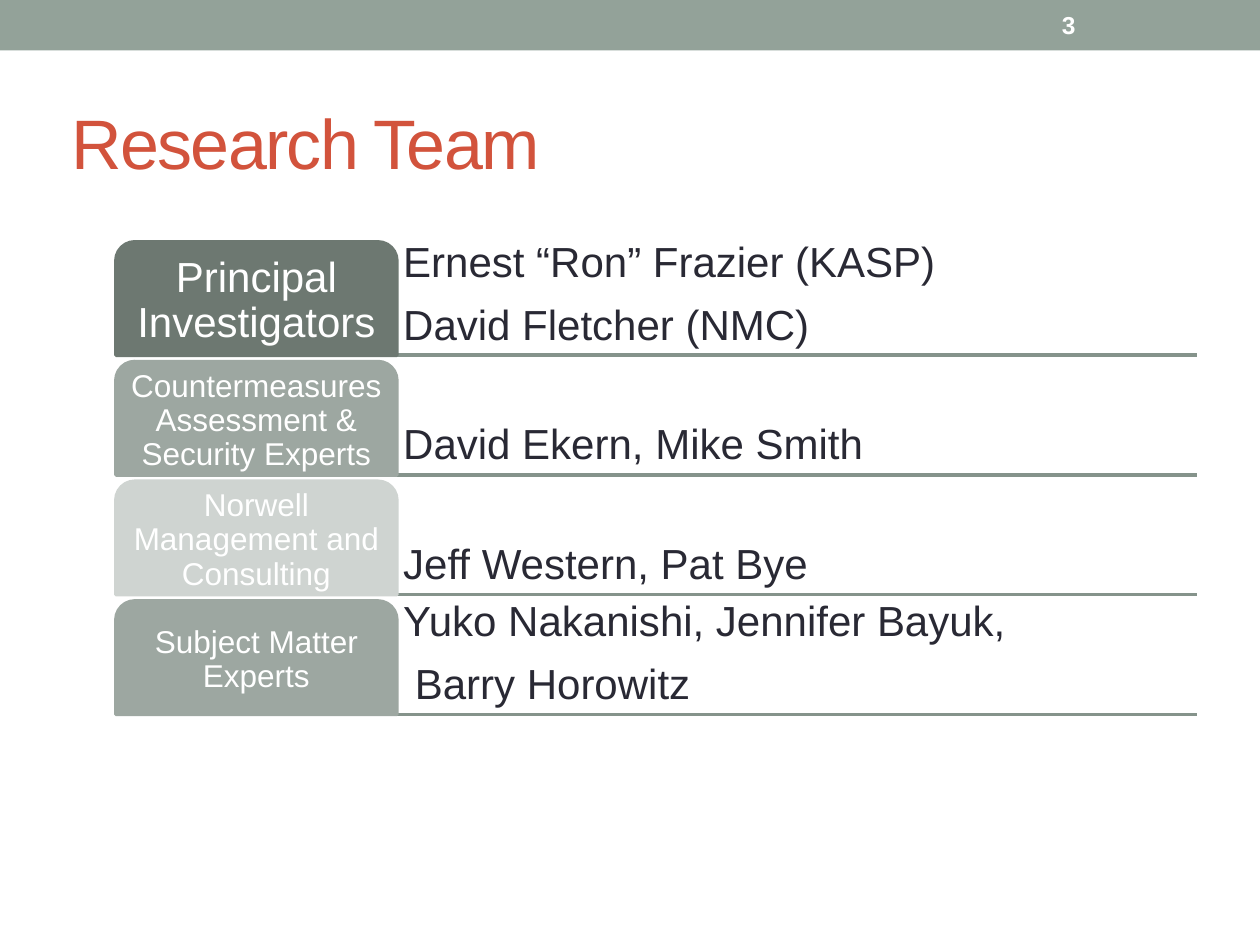
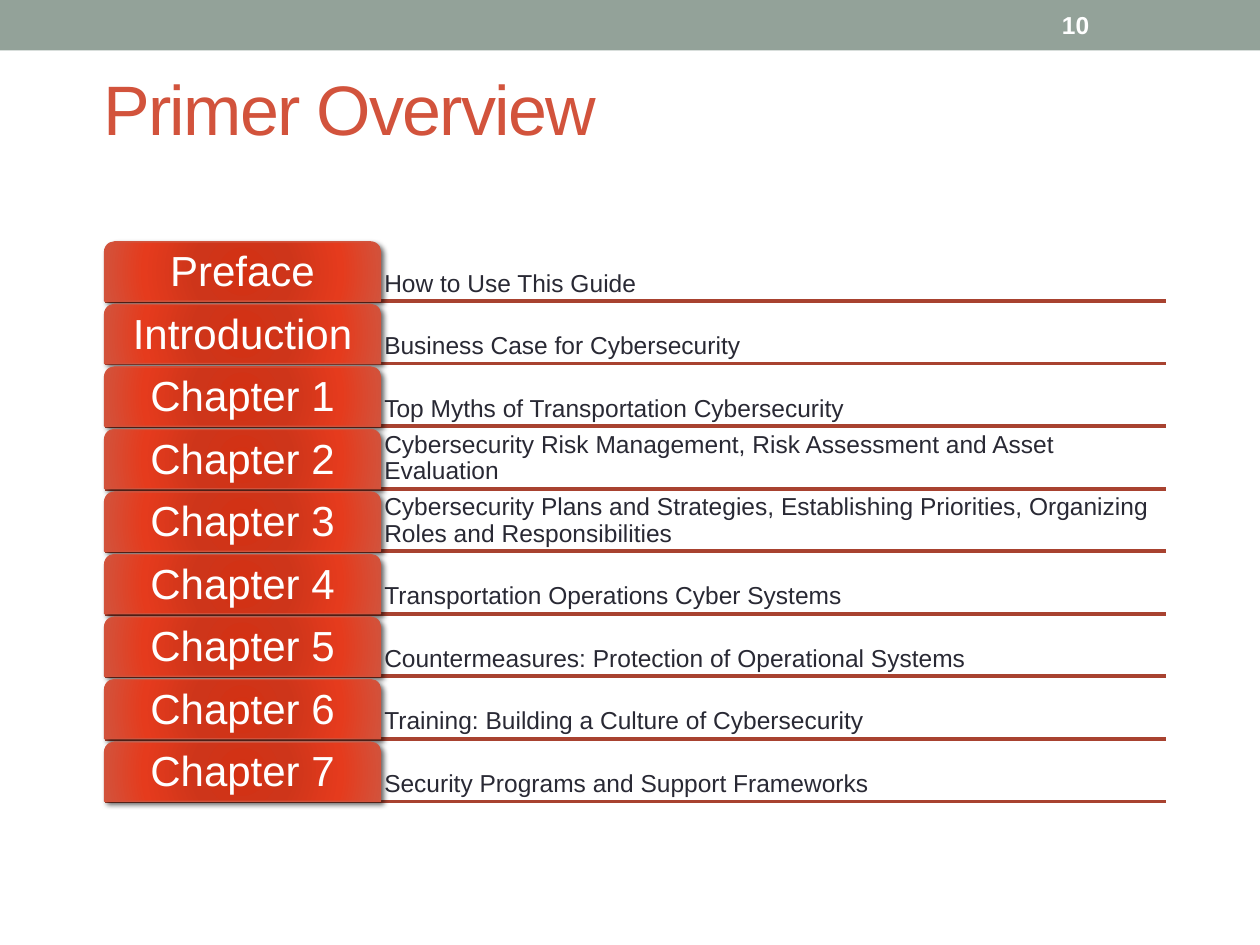
from lxml.etree import SubElement
from pptx import Presentation
from pptx.dml.color import RGBColor
from pptx.enum.shapes import MSO_CONNECTOR, MSO_SHAPE
from pptx.enum.text import MSO_ANCHOR, MSO_AUTO_SIZE, PP_ALIGN
from pptx.oxml import parse_xml
from pptx.oxml.ns import nsdecls, qn
from pptx.util import Inches, Pt

COLORS = {
    "band": "93A299", "title": "D2533C", "ink": "292934", "white": "FFFFFF",
    "sage_rule": "85938B", "dark_sage": "6D7871", "sage": "9DA7A1", "pale_sage": "CFD4D1",
    "red_rule": "A84230", "red_edge": "D2533C",
}
RED_STOPS = [(0, "D43113"), (34, "CE351A"), (70, "E53B1D"), (100, "D2533C")]
SIDES = ("left", "top", "right", "bottom")

TEAM = [
    ("Principal Investigators", ["Ernest “Ron” Frazier (KASP)", "David Fletcher (NMC)"],
     "dark_sage", 24, 0.05),
    ("Countermeasures Assessment & Security Experts", ["David Ekern, Mike Smith"],
     "sage", 18, 0.04),
    ("Norwell Management and Consulting", ["Jeff Western, Pat Bye"],
     "pale_sage", 18, 0.04),
    ("Subject Matter Experts", ["Yuko Nakanishi, Jennifer Bayuk,", " Barry Horowitz"],
     "sage", 18, 0.04),
]
CHAPTERS = [
    ("Preface", "How to Use This Guide"),
    ("Introduction", "Business Case for Cybersecurity"),
    ("Chapter 1", "Top Myths of Transportation Cybersecurity"),
    ("Chapter 2", "Cybersecurity Risk Management, Risk Assessment and Asset Evaluation"),
    ("Chapter 3", "Cybersecurity Plans and Strategies, Establishing Priorities, "
                  "Organizing Roles and Responsibilities"),
    ("Chapter 4", "Transportation Operations Cyber Systems"),
    ("Chapter 5", "Countermeasures: Protection of Operational Systems"),
    ("Chapter 6", "Training: Building a Culture of Cybersecurity"),
    ("Chapter 7", "Security Programs and Support Frameworks"),
]
CHAPTER_ROWS = [(label, [topic], "red_edge", 24, 0.05) for label, topic in CHAPTERS]


def rgb(name):
    return RGBColor.from_string(COLORS[name])


class Deck:
    font = "Arial"

    def __init__(self):
        self.prs = Presentation()
        self.prs.slide_width, self.prs.slide_height = Inches(10), Inches(7.5)
        self.layout = self.prs.slide_layouts[5]
        self.slide = None

    def start(self, title, box, number):
        self.slide = self.prs.slides.add_slide(self.layout)
        if len(self.prs.slides) == 1:
            self.band()
        self.title(title, box)
        self.number(number)

    def band(self):
        band = self.slide.shapes.add_shape(
            MSO_SHAPE.RECTANGLE, 0, 0, self.prs.slide_width, Inches(0.4))
        band.shadow.inherit = False
        band.fill.solid()
        band.fill.fore_color.rgb = rgb("band")
        band.line.fill.background()
        self.layout.shapes._spTree.insert(2, band._element)

    def title(self, text, box):
        heading = self.slide.shapes.title
        for side, length in zip(("left", "top", "width", "height"), box):
            setattr(heading, side, Inches(length))
        self.set_text(heading, [text], 40, "title", (0.07, 0.04, 0.07, 0.04))
        heading.text_frame.paragraphs[0].runs[0]._r.get_or_add_rPr().set("spc", "-100")

    def number(self, text):
        self.text((8.33, 0.02, 1.17, 0.36), [text], 14, "white",
                  (0.1, 0.05, 0.1, 0.05), bold=True)

    def text(self, box, lines, size, color, insets, **style):
        area = self.slide.shapes.add_textbox(*map(Inches, box))
        self.set_text(area, lines, size, color, insets, **style)

    def set_text(self, holder, lines, size, color, insets, anchor=MSO_ANCHOR.MIDDLE,
                 align=PP_ALIGN.LEFT, bold=False, spacing=1.0, after=0):
        frame = holder.text_frame
        frame_format = {"word_wrap": True, "auto_size": MSO_AUTO_SIZE.NONE,
                        "vertical_anchor": anchor}
        frame_format.update(
            {f"margin_{side}": Inches(inset) for side, inset in zip(SIDES, insets)})
        for name, value in frame_format.items():
            setattr(frame, name, value)
        for index, line in enumerate(lines):
            paragraph = frame.add_paragraph() if index else frame.paragraphs[0]
            run = paragraph.add_run()
            run.text = line
            run.font.color.rgb = rgb(color)
            formats = (
                (paragraph, {"alignment": align, "line_spacing": spacing,
                             "space_before": Pt(0), "space_after": Pt(after)}),
                (run.font, {"name": self.font, "size": Pt(size), "bold": bold}),
            )
            for target, values in formats:
                for name, value in values.items():
                    setattr(target, name, value)

    def rule(self, left, right, y, color):
        line = self.slide.shapes.add_connector(
            MSO_CONNECTOR.STRAIGHT, Inches(left), Inches(y), Inches(right), Inches(y))
        line.line.color.rgb = rgb(color)
        line.line.width = Pt(2.08)
        SubElement(line._element.spPr, qn("a:effectLst"))

    def tab(self, box, label, color, size, inset, glossy):
        tab = self.slide.shapes.add_shape(
            MSO_SHAPE.ROUND_2_SAME_RECTANGLE, *map(Inches, box))
        tab.adjustments[0] = 0.167
        tab.shadow.inherit = False
        tab.fill.solid()
        tab.fill.fore_color.rgb = rgb(color)
        tab.line.color.rgb = rgb(color)
        tab.line.width = Pt(0.75 if glossy else 2.08)
        if glossy:
            self.gloss(tab)
        self.set_text(tab, [label], size, "white", [inset] * 4,
                      align=PP_ALIGN.CENTER, spacing=0.9)

    def gloss(self, tab):
        stops = "".join(f'<a:gs pos="{position * 1000}"><a:srgbClr val="{color}"/></a:gs>'
                        for position, color in RED_STOPS)
        gradient = parse_xml(
            f'<a:gradFill {nsdecls("a")} rotWithShape="1"><a:gsLst>{stops}</a:gsLst>'
            '<a:path path="circle"><a:fillToRect l="100000" t="100000" r="100000" b="100000"/>'
            '</a:path></a:gradFill>')
        shadow = parse_xml(
            f'<a:outerShdw {nsdecls("a")} blurRad="{Pt(3)}" dist="{Pt(2)}" dir="2700000" '
            'rotWithShape="0"><a:srgbClr val="000000"><a:alpha val="60000"/></a:srgbClr>'
            '</a:outerShdw>')
        properties = tab._element.spPr
        properties.replace(properties.find(qn("a:solidFill")), gradient)
        properties.find(qn("a:effectLst")).append(shadow)

    def tab_list(self, rows, left, split, right, top, bottom, height,
                 rule_color, size, inset, glossy=False):
        pitch = (bottom - top - height) / (len(rows) - 1)
        tops = [top + index * pitch for index in range(len(rows))]
        for row_top in reversed(tops):
            self.rule(left, right, row_top + height, rule_color)
        for row_top, (label, lines, color, label_size, label_inset) in zip(tops, rows):
            self.text((split, row_top, right - split, height), lines, size, "ink",
                      [inset] * 4, anchor=MSO_ANCHOR.BOTTOM, spacing=0.9, after=size * 0.4)
            self.tab((left, row_top, split - left, height), label, color,
                     label_size, label_inset, glossy)


def main():
    deck = Deck()
    deck.start("Research Team", (0.5, 0.58, 9, 1.08), "3")
    deck.tab_list(TEAM, left=0.92, split=3.15, right=9.5, top=1.92, bottom=5.67,
                  height=0.9, rule_color="sage_rule", size=24, inset=0.05)
    deck.start("Primer Overview", (0.75, 0.25, 8.05, 1.21), "10")
    deck.tab_list(CHAPTER_ROWS, left=0.83, split=3.02, right=9.25, top=1.92, bottom=6.36,
                  height=0.47, rule_color="red_rule", size=14, inset=0.03, glossy=True)
    deck.prs.save("out.pptx")


if __name__ == "__main__":
    main()
